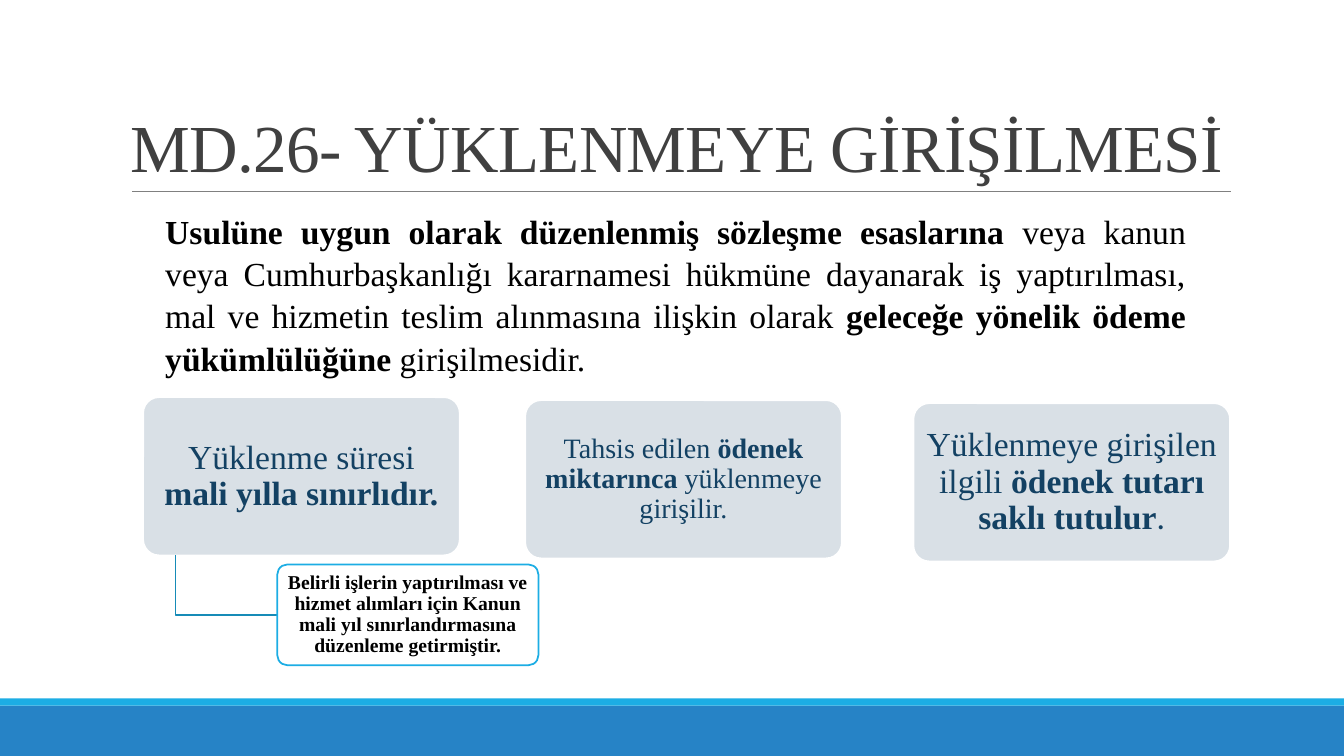
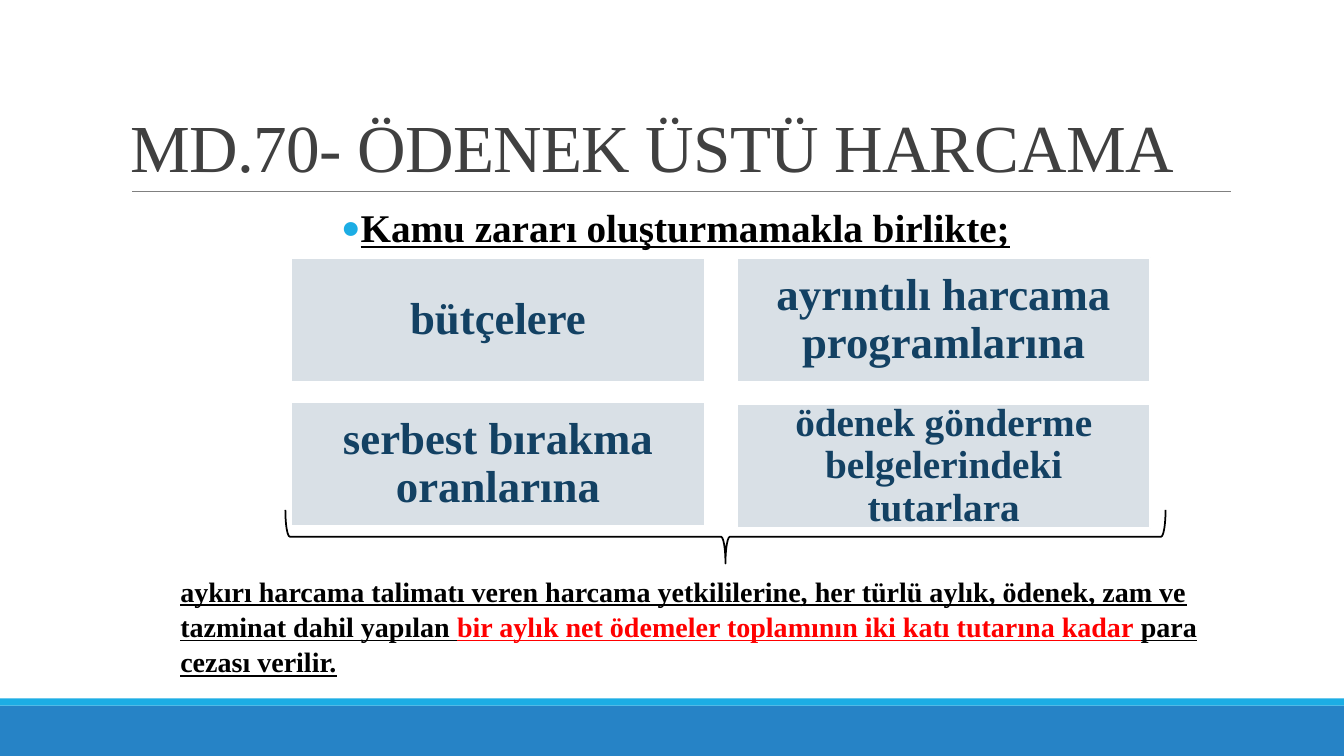
from dataclasses import dataclass

from lxml import etree
from pptx import Presentation
from pptx.dml.color import RGBColor
from pptx.enum import shapes, text
from pptx.oxml.ns import qn
from pptx.util import Inches, Pt

SHAPE = shapes.MSO_SHAPE
ALIGN = text.PP_ALIGN
ANCHOR = text.MSO_ANCHOR


@dataclass(frozen=True)
class Theme:
    font: str = "Times New Roman"
    alt_font: str = "Calibri"
    white: str = "FFFFFF"
    black: str = "000000"
    band: str = "2683C6"
    accent: str = "1CADE4"
    elbow: str = "168BB7"
    rule: str = "808080"
    title: str = "404040"
    panel: str = "D9E0E6"
    navy: str = "134163"
    red: str = "FF0000"
    title_size: int = 48
    large: int = 32
    lead: int = 28
    body: int = 24
    medium: int = 20
    note: int = 14
    outline: float = 1.25
    hairline: float = 0.5


T = Theme()


def rgb(color):
    return RGBColor.from_string(color)


def write(tf, content, size=T.body, color=T.black, font=T.font, bold=False,
          underline=False, align=ALIGN.LEFT, anchor=ANCHOR.TOP, spacing=1.0,
          inset=(0.1, 0.05), tracking=None):
    """Fill a frame with one paragraph; content is a string or (text, overrides) pairs."""
    tf.word_wrap = True
    tf.vertical_anchor = anchor
    tf.margin_left = tf.margin_right = Inches(inset[0])
    tf.margin_top = tf.margin_bottom = Inches(inset[1])
    p = tf.paragraphs[0]
    p.alignment = align
    p.line_spacing = spacing
    base = dict(size=size, color=color, font=font, bold=bold)
    for words, changes in [(content, {})] if isinstance(content, str) else content:
        look = {**base, **changes}
        r = p.add_run()
        r.text = words
        r.font.name = look["font"]
        r.font.size = Pt(look["size"])
        r.font.bold = look["bold"]
        r.font.underline = underline
        r.font.color.rgb = rgb(look["color"])
        if tracking is not None:
            r.font._element.set("spc", str(int(tracking * 100)))
    return p


def add_bullet(p, indent=0.1):
    pPr = p._p.get_or_add_pPr()
    pPr.set("marL", str(Inches(indent)))
    pPr.set("indent", str(-Inches(indent)))
    color = etree.SubElement(pPr, qn("a:buClr"))
    etree.SubElement(color, qn("a:srgbClr")).set("val", T.accent)
    etree.SubElement(pPr, qn("a:buFont")).set("typeface", T.alt_font)
    etree.SubElement(pPr, qn("a:buChar")).set("char", "•")


class Deck:
    def __init__(self):
        self.prs = Presentation()
        self.prs.slide_width = Inches(13.33)
        self.prs.slide_height = Inches(7.5)
        self.s = None

    def new_slide(self, title):
        self.s = self.prs.slides.add_slide(self.prs.slide_layouts[6])
        self.box(0, 7, 13.33, 0.5, fill=T.band)
        self.box(0, 6.93, 13.33, 0.07, fill=T.accent)
        self.rule(1.31, 1.9, 12.21)
        self.label(1.2, 0.31, 11.17, 1.59, title, size=T.title_size,
                   color=T.title, anchor=ANCHOR.BOTTOM, spacing=0.85, tracking=-0.5)

    def outline(self, sp, fill, line):
        if fill:
            sp.fill.solid()
            sp.fill.fore_color.rgb = rgb(fill)
        else:
            sp.fill.background()
        if line:
            sp.line.color.rgb = rgb(line)
            sp.line.width = Pt(T.outline)
        else:
            sp.line.fill.background()
        sp.shadow.inherit = False

    def box(self, x, y, w, h, kind=SHAPE.RECTANGLE, fill=None, line=None):
        sp = self.s.shapes.add_shape(kind, Inches(x), Inches(y), Inches(w), Inches(h))
        self.outline(sp, fill, line)
        return sp

    def panel(self, x, y, w, h, content, rounded=False, fill=T.panel, line=T.white, **fmt):
        kind = SHAPE.ROUNDED_RECTANGLE if rounded else SHAPE.RECTANGLE
        sp = self.box(x, y, w, h, kind, fill, line)
        if rounded:
            sp.adjustments[0] = 0.1
        look = dict(color=T.navy, align=ALIGN.CENTER, anchor=ANCHOR.MIDDLE, spacing=0.9)
        write(sp.text_frame, content, **{**look, **fmt})

    def label(self, x, y, w, h, content, **fmt):
        tb = self.s.shapes.add_textbox(Inches(x), Inches(y), Inches(w), Inches(h))
        return write(tb.text_frame, content, **fmt)

    def rule(self, x1, y, x2):
        line = self.s.shapes.add_connector(
            shapes.MSO_CONNECTOR.STRAIGHT, Inches(x1), Inches(y), Inches(x2), Inches(y))
        line.line.color.rgb = rgb(T.rule)
        line.line.width = Pt(T.hairline)
        etree.SubElement(line._element.spPr, qn("a:effectLst"))

    def polyline(self, points, color):
        start, *rest = [(Inches(x), Inches(y)) for x, y in points]
        builder = self.s.shapes.build_freeform(*start)
        builder.add_line_segments(rest, close=False)
        self.outline(builder.convert_to_shape(), None, color)

    def brace_below(self, x, y, w, h):
        """Draw a brace that spans w and points down, as a right brace turned by 90 degrees."""
        sp = self.box(x + (w - h) / 2, y - (w - h) / 2, h, w,
                      SHAPE.RIGHT_BRACE, line=T.black)
        sp.rotation = 90


def build_commitment(deck):
    deck.new_slide("MD.26- YÜKLENMEYE GİRİŞİLMESİ")
    strong = dict(bold=True)
    cards = [
        (1.42, T.body, [("Yüklenme süresi ", {}), ("mali yılla sınırlıdır.", strong)]),
        (5.21, T.medium, [("Tahsis edilen ", {}), ("ödenek miktarınca", strong),
                          (" yüklenmeye girişilir.", {})]),
        (9.06, T.body, [("Yüklenmeye girişilen ilgili ", {}),
                        ("ödenek tutarı saklı tutulur", strong),
                        (".", dict(font=T.alt_font))]),
    ]
    for i, (x, size, content) in enumerate(cards):
        deck.panel(x, 3.94 + 0.03 * i, 3.14, 1.57, content, rounded=True,
                   size=size, inset=(0.05, 0.03))
    deck.polyline([(1.74, 5.51), (1.74, 6.1), (2.75, 6.1)], T.elbow)
    deck.panel(2.75, 5.6, 2.59, 1,
               "Belirli işlerin yaptırılması ve hizmet alımları için Kanun "
               "mali yıl sınırlandırmasına düzenleme getirmiştir.",
               rounded=True, fill=T.white, line=T.accent, color=T.black,
               size=T.note, bold=True, inset=(0.03, 0.02))
    deck.label(1.54, 2.02, 10.32, 1.8, [
        ("Usulüne uygun olarak düzenlenmiş sözleşme esaslarına", strong),
        (" veya kanun veya Cumhurbaşkanlığı kararnamesi hükmüne dayanarak iş "
         "yaptırılması, mal ve hizmetin teslim alınmasına ilişkin olarak ", {}),
        ("geleceğe yönelik ödeme yükümlülüğüne ", strong),
        ("girişilmesidir.", {}),
    ], align=ALIGN.JUSTIFY, spacing=1.05)


def build_overspending(deck):
    deck.new_slide("MD.70- ÖDENEK ÜSTÜ HARCAMA")
    p = deck.label(1.2, 2.02, 11, 0.6, "Kamu zararı oluşturmamakla birlikte;",
                   size=T.lead, bold=True, underline=True, align=ALIGN.CENTER,
                   spacing=0.9, inset=(0, 0.05))
    add_bullet(p)
    limits = [
        ("bütçelere", T.large),
        ("ayrıntılı harcama programlarına", T.large),
        ("serbest bırakma oranlarına", T.large),
        ("ödenek gönderme belgelerindeki tutarlara", T.lead),
    ]
    for i, (words, size) in enumerate(limits):
        row, col = divmod(i, 2)
        deck.panel(2.89 + 4.42 * col, 2.56 + 1.43 * row + 0.02 * row * col, 4.1, 1.23,
                   words, size=size, bold=True, inset=(0.12, 0.12))
    deck.brace_below(2.83, 5.06, 8.73, 0.53)
    deck.label(1.69, 5.63, 11, 1.11, [
        ("aykırı harcama talimatı veren harcama yetkililerine, her türlü aylık, "
         "ödenek, zam ve tazminat dahil yapılan ", {}),
        ("bir aylık net ödemeler toplamının iki katı tutarına kadar ", dict(color=T.red)),
        ("para cezası verilir.", {}),
    ], size=T.medium, bold=True, underline=True, spacing=1.05)


def main():
    deck = Deck()
    build_commitment(deck)
    build_overspending(deck)
    deck.prs.save("out.pptx")


if __name__ == "__main__":
    main()
